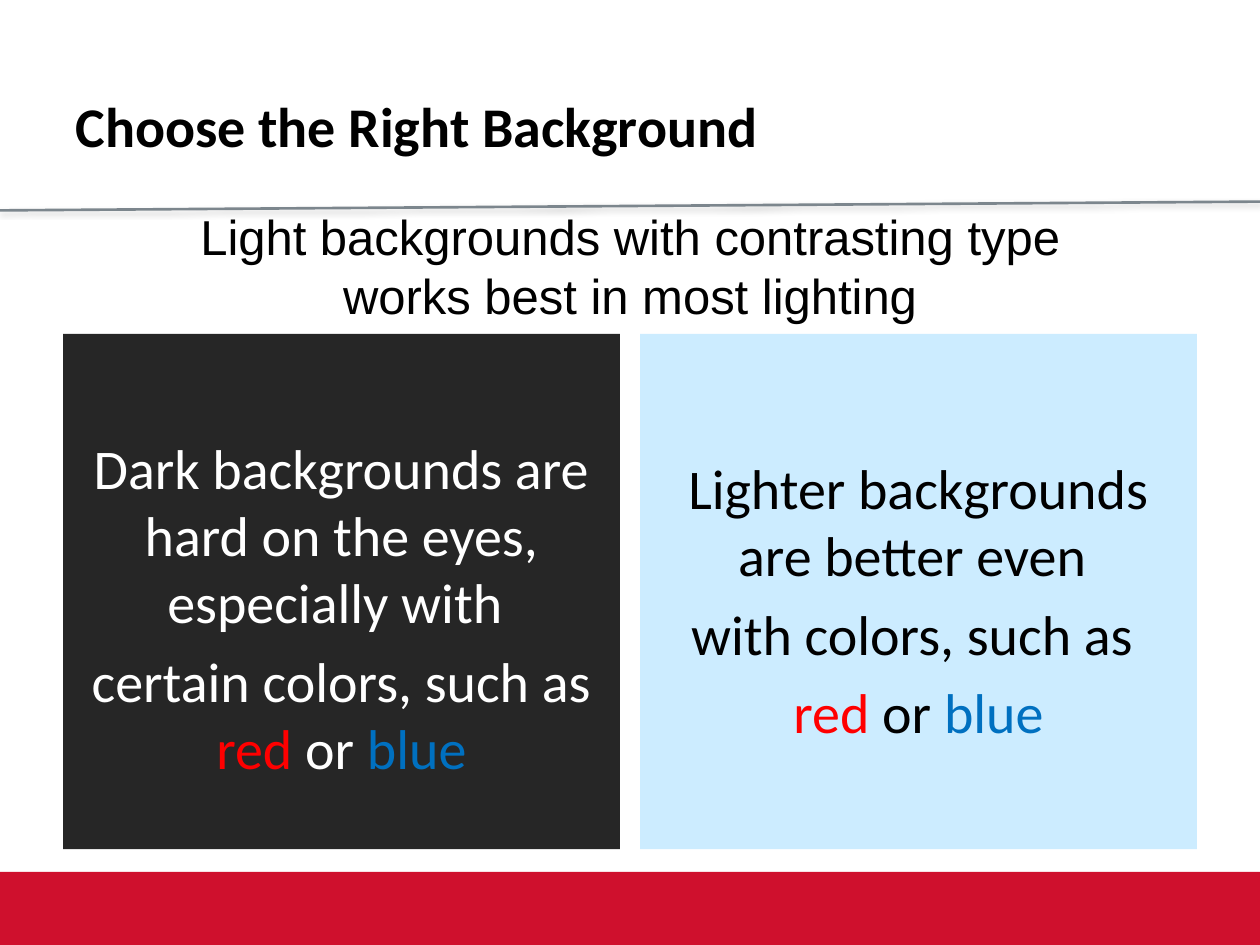
from dataclasses import dataclass

import lxml.etree
import pptx
import pptx.dml.color
import pptx.enum.shapes
import pptx.enum.text
import pptx.oxml
import pptx.oxml.ns
import pptx.util
from pptx.util import Inches

COLORS = {
    "band": "CF102D",
    "rule": "7C868D",
    "shadow": "808080",
    "dark": "262626",
    "light": "CCECFF",
    "black": "000000",
    "white": "FFFFFF",
    "red": "FF0000",
    "blue": "0070C0",
}
ALIGN = pptx.enum.text.PP_ALIGN
ANCHOR = pptx.enum.text.MSO_ANCHOR

Run = tuple[str, str]
Paragraph = list[Run]


@dataclass
class Panel:
    left: float
    fill: str
    top_inset: float
    paragraphs: list[Paragraph]


def rgb(name: str) -> pptx.dml.color.RGBColor:
    return pptx.dml.color.RGBColor.from_string(COLORS[name])


def write(shape, paragraphs: list[Paragraph], size: float, font: str = "Calibri",
          bold: bool = False, align=ALIGN.CENTER, anchor=ANCHOR.TOP,
          gap: float = 0, top_inset: float = 0.05) -> None:
    """Fill a shape with paragraphs of (text, colour name) runs; gap is in points."""
    frame = shape.text_frame
    frame.word_wrap = True
    frame.vertical_anchor = anchor
    frame.margin_top = Inches(top_inset)
    for index, runs in enumerate(paragraphs):
        paragraph = frame.add_paragraph() if index else frame.paragraphs[0]
        paragraph.alignment = align
        paragraph.space_before = pptx.util.Pt(gap if index else 0)
        for text, color in runs:
            run = paragraph.add_run()
            run.text = text
            run.font.name = font
            run.font.size = pptx.util.Pt(size)
            run.font.bold = bold
            run.font.color.rgb = rgb(color)


def add_block(slide, left: float, top: float, width: float, height: float, fill: str):
    block = slide.shapes.add_shape(
        pptx.enum.shapes.MSO_SHAPE.RECTANGLE,
        Inches(left), Inches(top), Inches(width), Inches(height))
    block.shadow.inherit = False
    block.fill.solid()
    block.fill.fore_color.rgb = rgb(fill)
    block.line.fill.background()
    return block


def add_text(slide, left: float, top: float, width: float, height: float,
             paragraphs: list[Paragraph], **text_format) -> None:
    box = slide.shapes.add_textbox(
        Inches(left), Inches(top), Inches(width), Inches(height))
    write(box, paragraphs, **text_format)


def add_header_rule(slide) -> None:
    """Draw the slanted line under the title with its soft shadow."""
    rule = slide.shapes.add_connector(
        pptx.enum.shapes.MSO_CONNECTOR.STRAIGHT,
        Inches(0), Inches(1.67), Inches(10), Inches(1.6))
    rule.line.color.rgb = rgb("rule")
    rule.line.width = pptx.util.Pt(1.5)
    effects = pptx.oxml.parse_xml(
        f'<a:effectLst {pptx.oxml.ns.nsdecls("a")}>'
        f'<a:outerShdw blurRad="{pptx.util.Pt(3.1)}" dist="{pptx.util.Pt(1.6)}"'
        ' dir="5400000" rotWithShape="0">'
        f'<a:srgbClr val="{COLORS["shadow"]}"><a:alpha val="38000"/></a:srgbClr>'
        '</a:outerShdw></a:effectLst>')
    rule._element.spPr.append(effects)


def add_panel(slide, panel: Panel) -> None:
    block = add_block(slide, panel.left, 2.65, 4.42, 4.09, panel.fill)
    write(block, panel.paragraphs, size=32, gap=6.4, top_inset=panel.top_inset)


def color_samples(joiner_color: str) -> Paragraph:
    return [("red", "red"), (" or ", joiner_color), ("blue", "blue")]


PANELS = [
    Panel(0.5, "dark", 0.79, [
        [("Dark backgrounds are hard on the eyes, especially with ", "white")],
        [("certain colors, such as ", "white"), *color_samples("white")],
    ]),
    Panel(5.08, "light", 0.95, [
        [("Lighter backgrounds are better even ", "black")],
        [("with colors, such as ", "black")],
        color_samples("black"),
    ]),
]


def main() -> None:
    deck = pptx.Presentation()
    deck.slide_width, deck.slide_height = Inches(10), Inches(7.5)
    slide = deck.slides.add_slide(deck.slide_layouts[6])

    add_block(slide, 0, 6.92, 10, 0.58, "band")
    add_header_rule(slide)
    add_text(slide, 0.5, 0.52, 7.75, 0.95,
             [[("Choose the Right Background", "black")]],
             size=32, bold=True, align=ALIGN.LEFT, anchor=ANCHOR.MIDDLE)
    for panel in PANELS:
        add_panel(slide, panel)
    add_text(slide, 1.44, 1.59, 7.12, 1.04,
             [[("Light backgrounds with contrasting type works best in most lighting",
                "black")]],
             size=28, font="Arial")
    deck.save("out.pptx")


if __name__ == "__main__":
    main()
